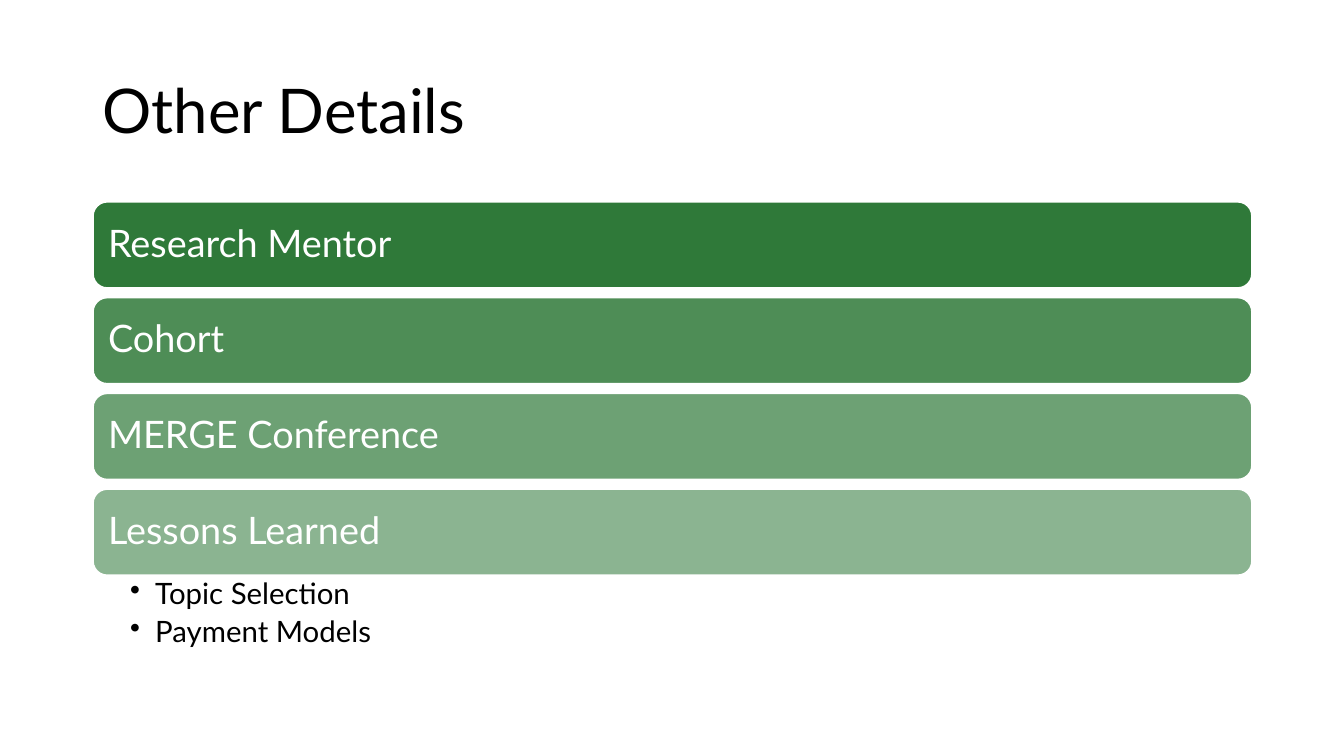
from dataclasses import dataclass

import lxml.etree
import pptx
import pptx.dml.color
import pptx.enum.shapes
import pptx.enum.text
import pptx.oxml.ns
import pptx.util

EMU_PER_PX = 9144  # 100 px to the inch
FONT = "Lato"
BLACK, WHITE, GREEN = "000000", "FFFFFF", "196B24"
LEFT, WIDTH = 92, 1150
BAR_TOP, BAR_HEIGHT, BAR_PITCH = 200, 86, 95


@dataclass
class Bar:
    label: str
    opacity: int  # percent


BARS = [
    Bar("Research Mentor", 90),
    Bar("Cohort", 77),
    Bar("MERGE Conference", 63),
    Bar("Lessons Learned", 50),
]
LESSONS = ["Topic Selection", "Payment Models"]


def px(length: int) -> pptx.util.Emu:
    return pptx.util.Emu(length * EMU_PER_PX)


def color(value: str) -> pptx.dml.color.RGBColor:
    return pptx.dml.color.RGBColor.from_string(value)


def set_frame(frame, left: int, top: int, right: int, bottom: int, anchor) -> None:
    frame.word_wrap = True
    frame.margin_left, frame.margin_top = px(left), px(top)
    frame.margin_right, frame.margin_bottom = px(right), px(bottom)
    frame.vertical_anchor = anchor


def style_paragraph(paragraph, text: str, size: int, text_color: str) -> None:
    paragraph.text = text
    paragraph.alignment = pptx.enum.text.PP_ALIGN.LEFT
    paragraph.line_spacing = 0.9
    paragraph.font.name = FONT
    paragraph.font.size = pptx.util.Pt(size)
    paragraph.font.color.rgb = color(text_color)


def add_title(slide, text: str) -> None:
    box = slide.shapes.add_textbox(px(LEFT), px(40), px(WIDTH), px(145))
    set_frame(box.text_frame, 10, 5, 10, 5, pptx.enum.text.MSO_ANCHOR.MIDDLE)
    style_paragraph(box.text_frame.paragraphs[0], text, 44, BLACK)


def add_bar(slide, bar: Bar, top: int) -> None:
    shape = slide.shapes.add_shape(
        pptx.enum.shapes.MSO_SHAPE.ROUNDED_RECTANGLE,
        px(LEFT), px(top), px(WIDTH), px(BAR_HEIGHT))
    shape.shadow.inherit = False
    shape.fill.solid()
    shape.fill.fore_color.rgb = color(GREEN)
    fill_color = shape.fill._xPr.find(".//" + pptx.oxml.ns.qn("a:srgbClr"))
    alpha = lxml.etree.SubElement(fill_color, pptx.oxml.ns.qn("a:alpha"))
    alpha.set("val", str(bar.opacity * 1000))
    shape.line.color.rgb = color(WHITE)
    shape.line.width = pptx.util.Pt(1.5)
    set_frame(shape.text_frame, 11, 11, 11, 11, pptx.enum.text.MSO_ANCHOR.MIDDLE)
    style_paragraph(shape.text_frame.paragraphs[0], bar.label, 27, WHITE)


def add_bullets(slide, items: list[str], top: int) -> None:
    box = slide.shapes.add_textbox(px(LEFT), px(top), px(WIDTH), px(104))
    frame = box.text_frame
    set_frame(frame, 37, 4, 21, 4, pptx.enum.text.MSO_ANCHOR.TOP)
    for index, item in enumerate(items):
        paragraph = frame.add_paragraph() if index else frame.paragraphs[0]
        properties = paragraph._p.get_or_add_pPr()
        properties.set("marL", str(px(25)))
        properties.set("indent", str(px(-25)))
        bullet = lxml.etree.SubElement(properties, pptx.oxml.ns.qn("a:buChar"))
        bullet.set("char", "•")
        style_paragraph(paragraph, item, 21, BLACK)
        paragraph.space_after = pptx.util.Pt(4.2)


def main() -> None:
    presentation = pptx.Presentation()
    presentation.slide_width, presentation.slide_height = px(1333), px(750)
    slide = presentation.slides.add_slide(presentation.slide_layouts[6])

    add_title(slide, "Other Details")

    # Stacked bars, fading downwards
    for index, bar in enumerate(BARS):
        add_bar(slide, bar, BAR_TOP + index * BAR_PITCH)

    # Details under the last bar
    add_bullets(slide, LESSONS, BAR_TOP + (len(BARS) - 1) * BAR_PITCH + BAR_HEIGHT)

    presentation.save("out.pptx")


if __name__ == "__main__":
    main()
